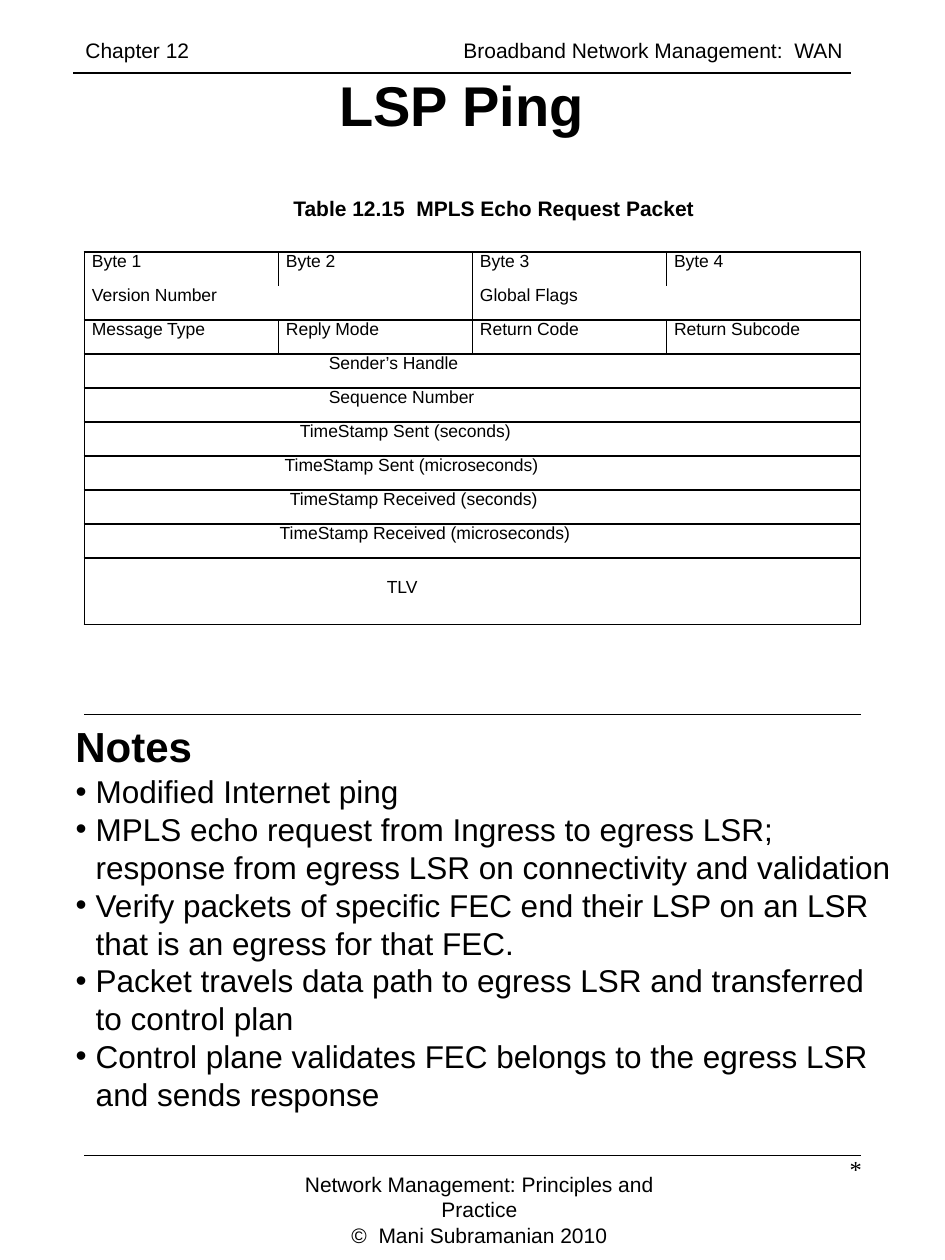
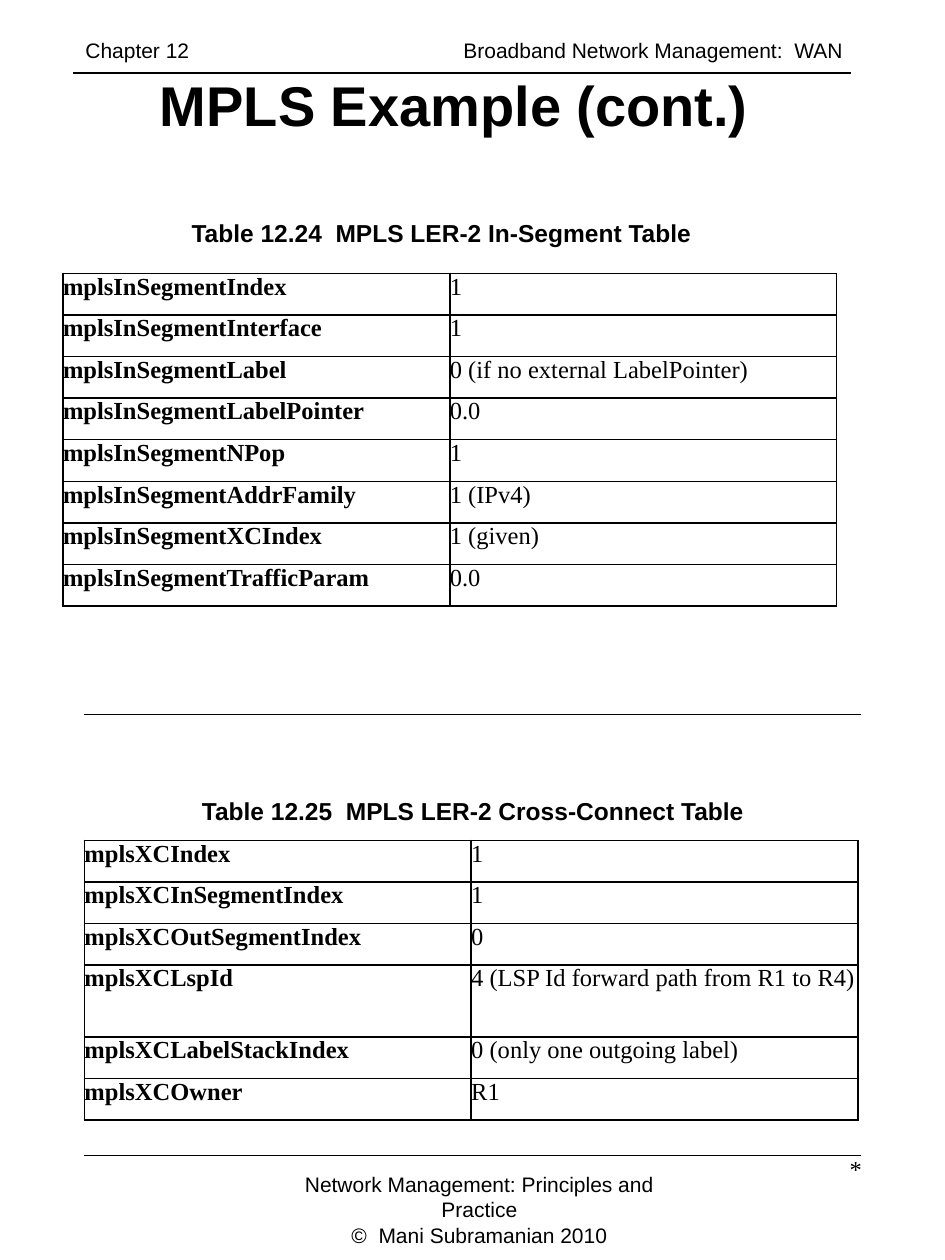
from lxml.etree import SubElement
from pptx import Presentation
from pptx.dml.color import RGBColor
from pptx.enum.shapes import MSO_CONNECTOR
from pptx.enum.text import MSO_AUTO_SIZE, PP_ALIGN
from pptx.oxml.ns import qn
from pptx.util import Inches, Pt

COLORS = {"ink": "000000", "paper": "FFFFFF"}
INK = RGBColor.from_string(COLORS["ink"])
SANS, SERIF = "Arial", "Times New Roman"
LEFT, MID, RIGHT = PP_ALIGN.LEFT, PP_ALIGN.CENTER, PP_ALIGN.RIGHT


def write(frame, texts, size, face=SANS, bold=False, align=LEFT):
    """Fill a text frame with one paragraph per text; a newline is a line break."""
    frame.word_wrap = True
    for i, text in enumerate(texts):
        para = frame.paragraphs[0] if i == 0 else frame.add_paragraph()
        para.alignment = align
        para.space_before = Pt(0)
        for j, line in enumerate(text.split("\n")):
            if j:
                para.add_line_break()
            run = para.add_run()
            run.text = line
            run.font.size = Pt(size)
            run.font.name = face
            run.font.bold = bold
            run.font.color.rgb = INK


def grid(slide, left, top, widths, heights, rows, size, face, pad=0, lead=False, gaps=()):
    """Add a ruled table; short rows span evenly, lead bolds column one, gaps lack a rule."""
    table = slide.shapes.add_table(
        len(rows), len(widths), Inches(left), Inches(top),
        Inches(sum(widths)), Inches(sum(heights))).table
    table.first_row = table.horz_banding = False
    for col, width in zip(table.columns, widths):
        col.width = Inches(width)
    for r, row in enumerate(rows):
        table.rows[r].height = Inches(heights[r])
        span = len(widths) // len(row)
        for c in range(len(widths)):
            cell = table.cell(r, c)
            cell.margin_left = cell.margin_right = Inches(pad)
            cell.margin_top = cell.margin_bottom = 0
            cell.fill.background()
            props = cell._tc.get_or_add_tcPr()
            for k, side in enumerate("LRTB"):
                rule = SubElement(props, qn(f"a:ln{side}"), w=str(Pt(1)))
                if (r, side) in gaps:
                    SubElement(rule, qn("a:noFill"))
                else:
                    fill = SubElement(rule, qn("a:solidFill"))
                    SubElement(fill, qn("a:srgbClr"), val=COLORS["ink"])
                props.insert(k, rule)
        for c, text in enumerate(row):
            cell = table.cell(r, c * span)
            if span > 1:
                cell.merge(table.cell(r, c * span + span - 1))
            write(cell.text_frame, [text], size, face, lead and c == 0)
    return table


deck = Presentation()
deck.slide_width, deck.slide_height = Inches(7.5), Inches(10)
ping = deck.slides.add_slide(deck.slide_layouts[1])
cross = deck.slides.add_slide(deck.slide_layouts[5])

# Title, rules, header and footer of every slide
footer = ["Network Management: Principles and Practice", "©  Mani Subramanian 2010"]
header = ["Chapter 12\tBroadband Network Management:  WAN"]
for slide, name, left, width in [
    (ping, "LSP Ping", 0.58, 6.17),
    (cross, "MPLS Example (cont.)", 0.42, 6.37),
]:
    slide.background.fill.solid()
    slide.background.fill.fore_color.rgb = RGBColor.from_string(COLORS["paper"])
    title = slide.shapes.title
    title.left, title.top = Inches(left), Inches(0.58)
    title.width, title.height = Inches(width), Inches(0.5)
    title.text_frame.auto_size = MSO_AUTO_SIZE.NONE
    write(title.text_frame, [name], 32, bold=True, align=MID)

    for x, y, end in [(0.58, 0.58, 6.75), (0.67, 5.67, 6.83), (0.67, 9.17, 6.83)]:
        rule = slide.shapes.add_connector(
            MSO_CONNECTOR.STRAIGHT, Inches(x), Inches(y), Inches(end), Inches(y))
        rule.line.color.rgb = INK
        rule.line.width = Pt(1)
        SubElement(rule._element.spPr, qn("a:effectLst"))

    for x, y, w, h, texts, size, face, align in [
        (2, 9.25, 3.61, 0.5, footer, 12, SANS, MID),
        (5.38, 9.11, 1.56, 0.67, ["*"], 14, SERIF, RIGHT),
        (0.58, 0.25, 6.27, 0.3, header, 12, SANS, LEFT),
    ]:
        box = slide.shapes.add_textbox(Inches(x), Inches(y), Inches(w), Inches(h))
        write(box.text_frame, texts, size, face, align=align)
    tabs = SubElement(box.text_frame.paragraphs[0]._p.get_or_add_pPr(), qn("a:tabLst"))
    SubElement(tabs, qn("a:tab"), pos=str(Inches(3)), algn="l")

# Captions and the notes heading
for slide, x, y, w, h, text, size, align in [
    (ping, 2.19, 1.5, 3.46, 0.3, "Table 12.15  MPLS Echo Request Packet", 12, MID),
    (ping, 0.5, 5.67, 1.67, 0.5, "Notes", 24, LEFT),
    (cross, 0.42, 1.68, 6.17, 0.34, "Table 12.24  MPLS LER-2 In-Segment Table", 14, MID),
    (cross, 0.67, 6.27, 6.17, 0.34, "Table 12.25  MPLS LER-2 Cross-Connect Table", 14, MID),
]:
    box = slide.shapes.add_textbox(Inches(x), Inches(y), Inches(w), Inches(h))
    write(box.text_frame, [text], size, bold=True, align=align)

# Slide 1: notes
notes = ping.placeholders[1]
notes.left, notes.top = Inches(0.5), Inches(6.08)
notes.width, notes.height = Inches(6.83), Inches(2.84)
notes.text_frame.auto_size = MSO_AUTO_SIZE.NONE
write(notes.text_frame, [
    "Modified Internet ping",
    "MPLS echo request from Ingress to egress LSR;\n"
    "response from egress LSR on connectivity and validation",
    "Verify packets of specific FEC end their LSP on an LSR\n"
    "that is an egress for that FEC.",
    "Packet travels data path to egress LSR and transferred\n"
    "to control plan",
    "Control plane validates FEC belongs to the egress LSR\n"
    "and sends response",
], 18)
for para in notes.text_frame.paragraphs:
    props = para._p.get_or_add_pPr()
    props.set("marL", str(Inches(0.16)))
    props.set("indent", str(-Inches(0.16)))
    SubElement(props, qn("a:buChar"), char="•")

# Slide 1: packet layout
fields = [
    ("Sender’s Handle", 1.88),
    ("Sequence Number", 1.88),
    ("TimeStamp Sent (seconds)", 1.65),
    ("TimeStamp Sent (microseconds)", 1.53),
    ("TimeStamp Received (seconds)", 1.57),
    ("TimeStamp Received (microseconds)", 1.49),
    ("TLV", 2.34),
]
heads = [
    ["Byte 1", "Byte 2", "Byte 3", "Byte 4"],
    ["Version Number", "Global Flags"],
    ["Message Type", "Reply Mode", "Return Code", "Return Subcode"],
]
packet = grid(ping, 0.67, 2, [1.54] * 4, [0.27] * 9 + [0.53],
              heads + [[text] for text, _ in fields], 10, SANS,
              pad=0.06, gaps=[(0, "B"), (1, "T")])
for r, (_, indent) in enumerate(fields, len(heads)):
    para = packet.cell(r, 0).text_frame.paragraphs[0]
    para._p.get_or_add_pPr().set("marL", str(Inches(indent)))
packet.cell(9, 0).margin_top = Inches(0.16)

# Slide 2: segment and cross-connect values
segment = [
    ["mplsInSegmentIndex", "1"],
    ["mplsInSegmentInterface", "1"],
    ["mplsInSegmentLabel", "0 (if no external LabelPointer)"],
    ["mplsInSegmentLabelPointer", "0.0"],
    ["mplsInSegmentNPop", "1"],
    ["mplsInSegmentAddrFamily", "1 (IPv4)"],
    ["mplsInSegmentXCIndex", "1 (given)"],
    ["mplsInSegmentTrafficParam", "0.0"],
]
connect = [
    ["mplsXCIndex", "1"],
    ["mplsXCInSegmentIndex", "1"],
    ["mplsXCOutSegmentIndex", "0"],
    ["mplsXCLspId", "4 (LSP Id forward path from R1 to R4)"],
    ["mplsXCLabelStackIndex", "0 (only one outgoing label)"],
    ["mplsXCOwner", "R1"],
]
for left, top, heights, rows in [
    (0.5, 2.17, [0.33] * 8, segment),
    (0.67, 6.67, [0.33] * 3 + [0.57] + [0.33] * 2, connect),
]:
    grid(cross, left, top, [3.07] * 2, heights, rows, 14, SERIF, lead=True)

deck.save("out.pptx")
